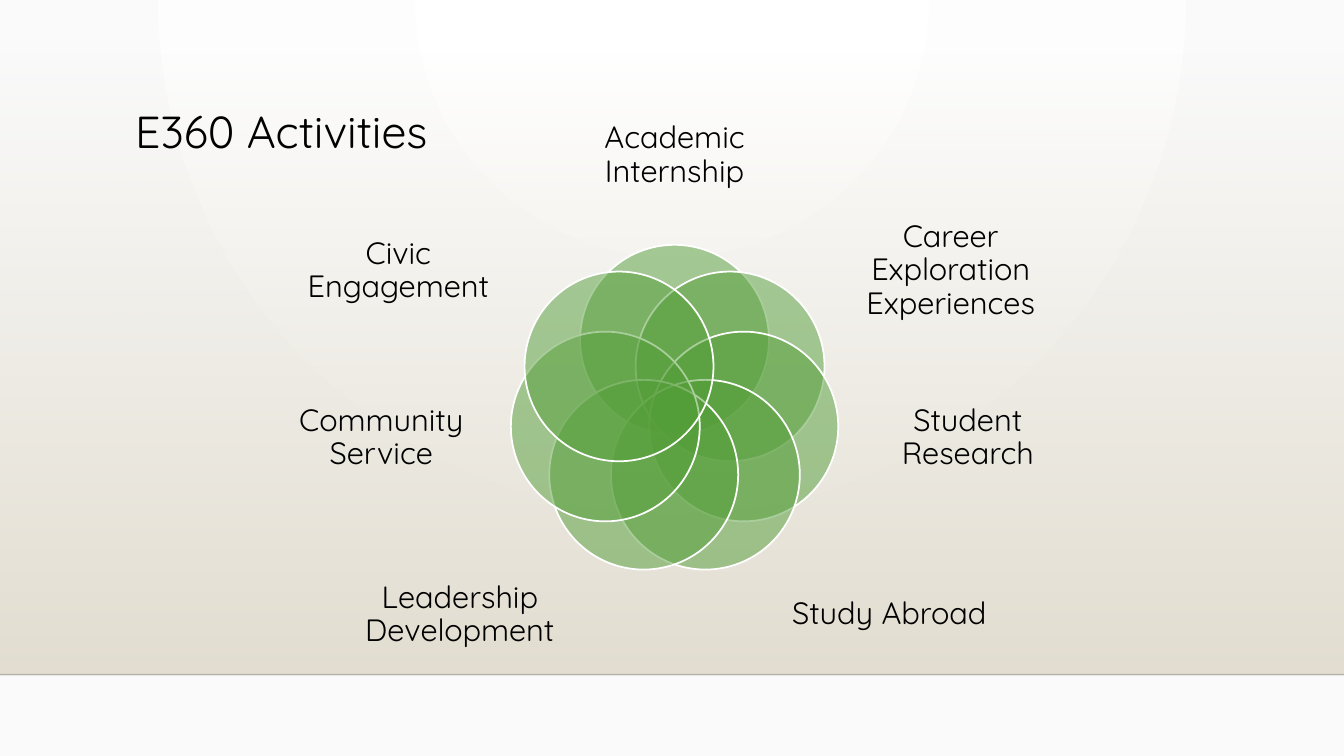
"""Build the E360 Activities slide: seven overlapping circles with labels."""
from math import cos, pi, sin

from lxml.etree import SubElement
from pptx import Presentation
from pptx.dml.color import RGBColor
from pptx.enum.shapes import MSO_CONNECTOR, MSO_SHAPE
from pptx.enum.text import MSO_ANCHOR, MSO_AUTO_SIZE, PP_ALIGN
from pptx.oxml.ns import qn
from pptx.util import Cm, Pt

BLACK = RGBColor(0x00, 0x00, 0x00)
WHITE = RGBColor(0xFF, 0xFF, 0xFF)
OFF_WHITE = RGBColor(0xFA, 0xFA, 0xFA)
SAND = RGBColor(0xE3, 0xDE, 0xD1)
SAND_DEEP = RGBColor(0xE4, 0xE0, 0xD3)
HORIZON = RGBColor(0x00, 0x00, 0x01)
GREEN = RGBColor(0x54, 0x9E, 0x39)

WIDTH, HEIGHT = 33.87, 19.05
FLOOR = 17.0
CENTER_X, CENTER_Y = 17.0, 10.35
RING_RADIUS = 1.79
PETAL_WIDTH, PETAL_HEIGHT = 4.76, 4.78

TOP = (0, 3.92, 5.46, 2.92)
UPPER = (6.96, 6.83, 5.16, 3.2)
MIDDLE = (7.39, 11.04, 5.05, 3.43)
LOWER = (5.41, 15.49, 5.46, 3.15)
ACTIVITIES = [
    ("Academic Internship", 1, TOP),
    ("Career Exploration Experiences", 1, UPPER),
    ("Student Research", 1, MIDDLE),
    ("Study Abroad", 1, LOWER),
    ("Leadership Development", -1, LOWER),
    ("Community Service", -1, MIDDLE),
    ("Civic Engagement", -1, UPPER),
]


class ActivitySlide:
    font_name = "Quicksand"

    def __init__(self, deck):
        self.slide = deck.slides.add_slide(deck.slide_layouts[5])
        self.shapes = self.slide.shapes

    def set_alpha(self, fill_parent, percent):
        color = next(fill_parent.iter(qn("a:srgbClr")))
        SubElement(color, qn("a:alpha"), val=str(percent * 1000))

    def set_gradient(self, fill, start, end):
        fill.gradient()
        for stop, color in zip(fill.gradient_stops, (start, end)):
            stop.color.rgb = color

    def glow(self):
        self.set_gradient(self.slide.background.fill, WHITE, OFF_WHITE)
        gradient = next(self.slide.element.iter(qn("a:gradFill")))
        gradient.remove(gradient.find(qn("a:lin")))
        route = SubElement(gradient, qn("a:path"), {"path": "circle"})
        SubElement(route, qn("a:fillToRect"), l="43000", t="0", r="43000", b="100000")

    def wall(self, top, bottom):
        wall = self.shapes.add_shape(
            MSO_SHAPE.RECTANGLE, 0, Cm(top), Cm(WIDTH), Cm(bottom - top))
        wall.shadow.inherit = False
        wall.line.fill.background()
        self.set_gradient(wall.fill, SAND, SAND_DEEP)
        wall.fill.gradient_angle = 270
        self.set_alpha(wall.element.spPr, 0)

    def horizon(self, y):
        horizon = self.shapes.add_connector(
            MSO_CONNECTOR.STRAIGHT, 0, Cm(y), Cm(WIDTH), Cm(y))
        horizon.line.color.rgb = HORIZON
        horizon.line.width = Pt(1)
        properties = horizon.element.spPr
        self.set_alpha(properties, 20)
        SubElement(properties, qn("a:effectLst"))

    def set_text(self, frame, text, size, align, anchor):
        frame.word_wrap = True
        frame.auto_size = MSO_AUTO_SIZE.NONE
        frame.vertical_anchor = anchor
        frame.text = text
        paragraph = frame.paragraphs[0]
        paragraph.alignment = align
        paragraph.line_spacing = 0.9
        paragraph.font.name = self.font_name
        paragraph.font.size = Pt(size)
        paragraph.font.color.rgb = BLACK

    def title(self, text):
        title = self.shapes.title
        title.left, title.top = Cm(3.15), Cm(2.64)
        title.width, title.height = Cm(26.67), Cm(2.92)
        self.set_text(title.text_frame, text, 32, PP_ALIGN.LEFT, MSO_ANCHOR.TOP)
        title.element.getparent().append(title.element)

    def petal(self, x, y):
        petal = self.shapes.add_shape(
            MSO_SHAPE.OVAL, Cm(x - PETAL_WIDTH / 2), Cm(y - PETAL_HEIGHT / 2),
            Cm(PETAL_WIDTH), Cm(PETAL_HEIGHT))
        petal.shadow.inherit = False
        petal.fill.solid()
        petal.fill.fore_color.rgb = GREEN
        self.set_alpha(petal.element.spPr, 50)
        petal.line.color.rgb = WHITE
        petal.line.width = Pt(1.25)

    def label(self, text, x, y, width, height):
        label = self.shapes.add_textbox(
            Cm(x - width / 2), Cm(y - height / 2), Cm(width), Cm(height))
        frame = label.text_frame
        frame.margin_left = frame.margin_right = 0
        frame.margin_top = frame.margin_bottom = 0
        self.set_text(frame, text, 22, PP_ALIGN.CENTER, MSO_ANCHOR.MIDDLE)


def main():
    deck = Presentation()
    deck.slide_width, deck.slide_height = Cm(WIDTH), Cm(HEIGHT)
    page = ActivitySlide(deck)
    page.glow()
    page.wall(1.3, FLOOR)
    page.horizon(FLOOR)
    page.title("E360 Activities")
    for index, (activity, side, (offset, y, width, height)) in enumerate(ACTIVITIES):
        angle = 2 * pi * index / len(ACTIVITIES)
        page.petal(CENTER_X + RING_RADIUS * sin(angle),
                   CENTER_Y - RING_RADIUS * cos(angle))
        page.label(activity, CENTER_X + side * offset, y, width, height)
    deck.save("out.pptx")


if __name__ == "__main__":
    main()
